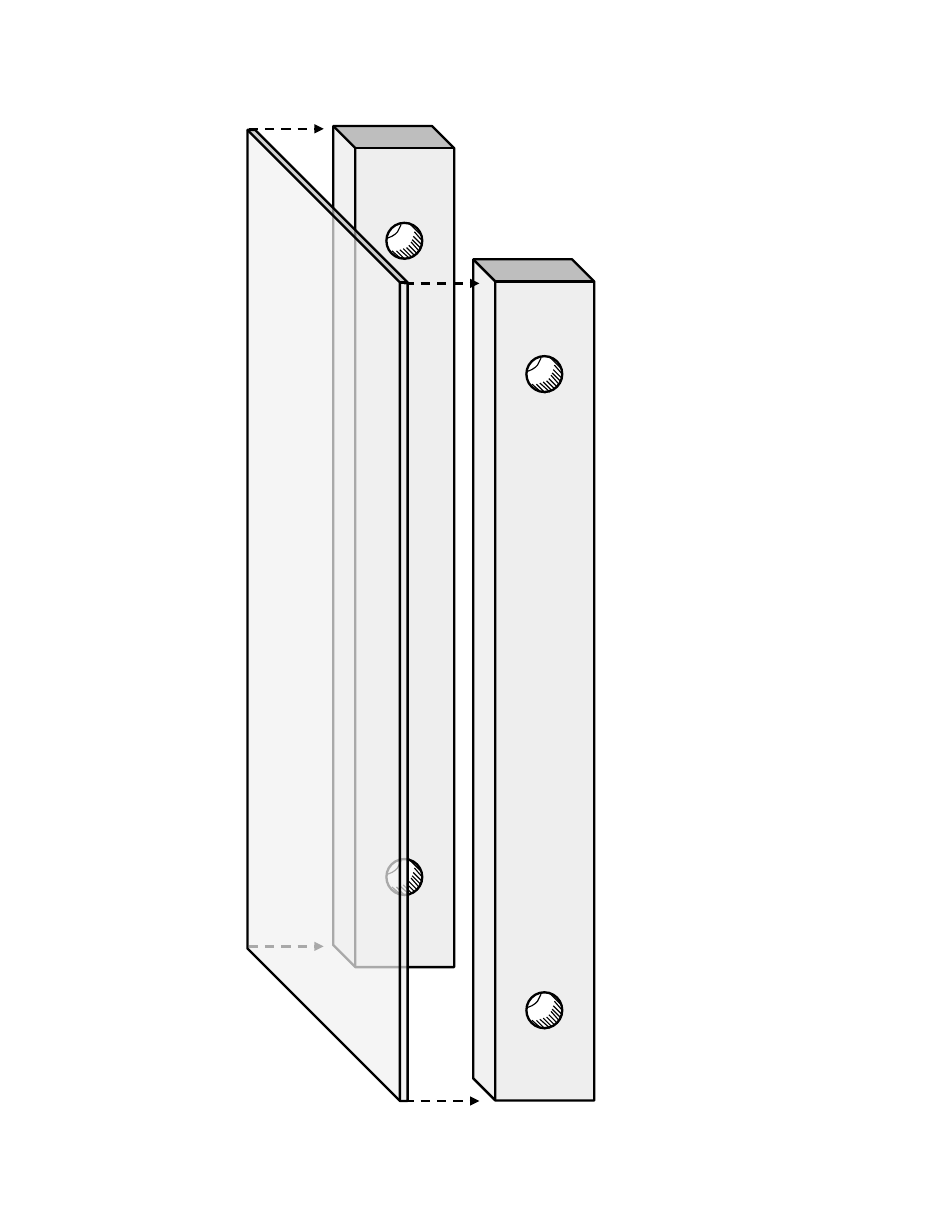
"""Draw a clear plate that fits onto two drilled bars."""
from pptx import Presentation
from pptx.dml.color import RGBColor
from pptx.enum.dml import MSO_LINE
from pptx.enum.shapes import MSO_CONNECTOR, MSO_SHAPE
from pptx.oxml.ns import qn
from pptx.util import Inches, Pt
from lxml.etree import SubElement

BLACK = RGBColor(0, 0, 0)
WHITE = RGBColor(255, 255, 255)
GREY = RGBColor(0xEE, 0xEE, 0xEE)

BAR = (1.01, 5.53, 7.51, 1.08)
PLATE = (-1.41, 4.78, 8.67, 1.43)
SHIFTS = [(0, 0), (-1.25, -1.19)]
HOLES = [(4.7, 8.86), (4.7, 3.18)]
HOLE = 0.32
GLINT = [(0, 0.14), (0.05, 0.12), (0.08, 0.1), (0.1, 0.08),
         (0.12, 0.04), (0.13, 0.02), (0.13, 0)]
HATCH = [
    (0.13, 0.32, 0.05, 0.25), (0.17, 0.33, 0.09, 0.25),
    (0.21, 0.32, 0.12, 0.24), (0.23, 0.31, 0.15, 0.23),
    (0.25, 0.29, 0.18, 0.22), (0.27, 0.27, 0.2, 0.2),
    (0.29, 0.25, 0.22, 0.17), (0.31, 0.23, 0.23, 0.15),
    (0.32, 0.2, 0.24, 0.12), (0.32, 0.16, 0.25, 0.08),
    (0.3, 0.1, 0.2, 0),
]
ARROWS = [(3.61, 9.83), (2.22, 8.45), (2.22, 1.15), (3.61, 2.53)]
REACH = 0.67


def ink(line, width):
    line.color.rgb = BLACK
    line.width = Pt(width)


def solid(shapes, kind, box, color, adjust=None, alpha=None):
    shape = shapes.add_shape(kind, *map(Inches, box))
    shape.rotation = 270
    shape.shadow.inherit = False
    shape.fill.solid()
    shape.fill.fore_color.rgb = color
    ink(shape.line, 1.5)
    if adjust is not None:
        shape.adjustments[0] = adjust
    if alpha is not None:
        tint = shape._element.spPr.find(qn("a:solidFill"))[0]
        SubElement(tint, qn("a:alpha"), val=str(alpha * 1000))


def stroke(shapes, ends, width, arrow=False):
    link = shapes.add_connector(MSO_CONNECTOR.STRAIGHT, *map(Inches, ends))
    ink(link.line, width)
    if arrow:
        link.line.dash_style = MSO_LINE.DASH
        SubElement(link.line._get_or_add_ln(), qn("a:tailEnd"), type="triangle")
    SubElement(link._element.spPr, qn("a:effectLst"))


def drill(shapes, x, y):
    solid(shapes, MSO_SHAPE.OVAL, (x, y, HOLE, HOLE), WHITE)
    spots = [(Inches(x + dx), Inches(y + dy)) for dx, dy in GLINT]
    path = shapes.build_freeform(*spots[0])
    path.add_line_segments(spots[1:], close=False)
    curve = path.convert_to_shape()
    curve.shadow.inherit = False
    curve.fill.background()
    ink(curve.line, 0.75)
    for x1, y1, x2, y2 in HATCH:
        stroke(shapes, (x + x1, y + y1, x + x2, y + y2), 0.75)


def main():
    deck = Presentation()
    deck.slide_width, deck.slide_height = Inches(8.5), Inches(11)
    shapes = deck.slides.add_slide(deck.slide_layouts[6]).shapes
    left, top, width, height = BAR
    for dx, dy in SHIFTS:
        box = (left + dx, top + dy, width, height)
        solid(shapes, MSO_SHAPE.CUBE, box, GREY, adjust=0.183)
        for x, y in HOLES:
            drill(shapes, x + dx, y + dy)
    for x, y in ARROWS:
        stroke(shapes, (x, y, x + REACH, y), 1.5, arrow=True)
    solid(shapes, MSO_SHAPE.CUBE, PLATE, GREY, adjust=0.952, alpha=70)
    deck.save("out.pptx")


if __name__ == "__main__":
    main()
